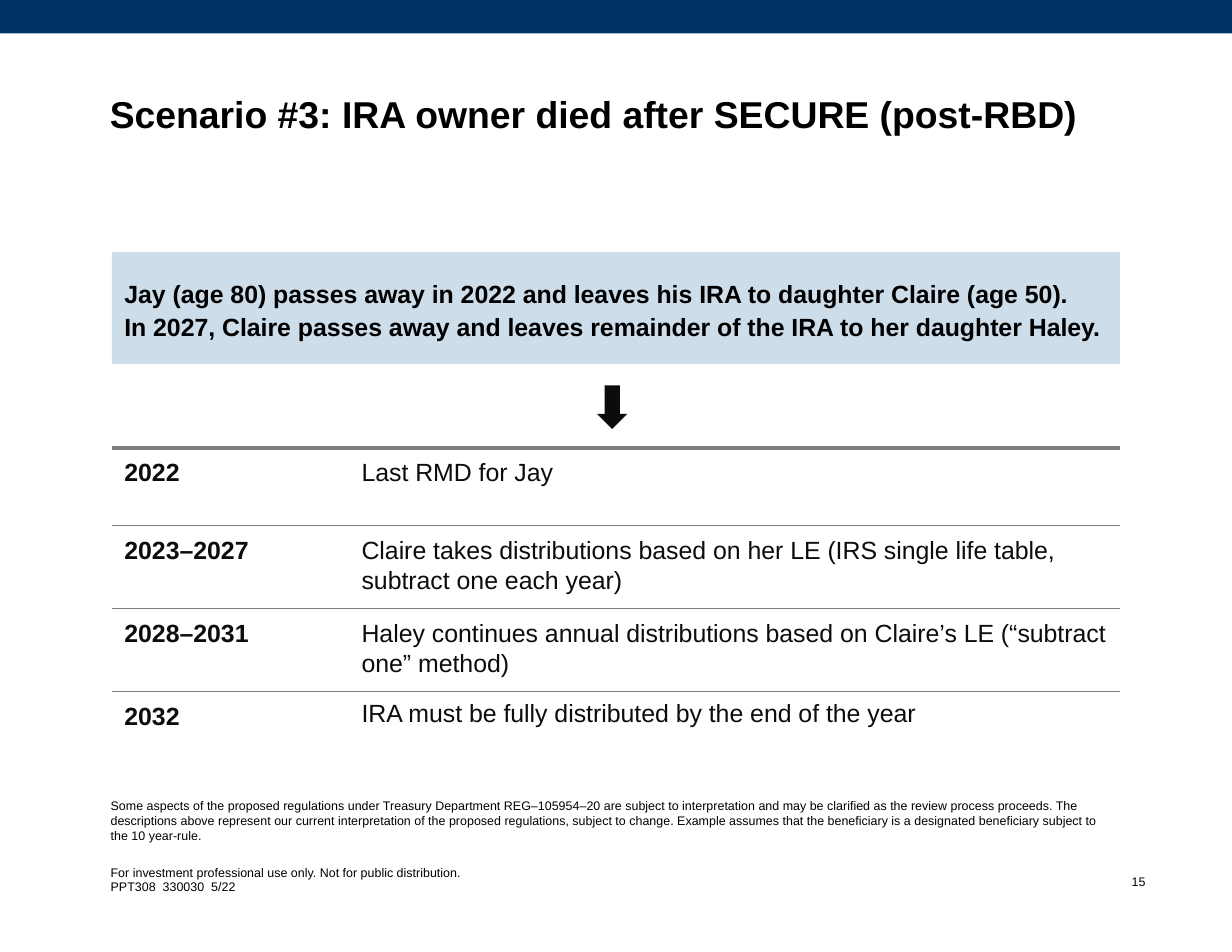
from dataclasses import dataclass

from lxml import etree
from pptx import Presentation
from pptx.dml.color import RGBColor
from pptx.enum.shapes import MSO_SHAPE
from pptx.enum.text import MSO_ANCHOR, PP_ALIGN
from pptx.oxml.ns import qn
from pptx.util import Cm, Pt

RECTANGLE = MSO_SHAPE.RECTANGLE
DOWN_ARROW = MSO_SHAPE.DOWN_ARROW
TOP, MIDDLE, BOTTOM = MSO_ANCHOR.TOP, MSO_ANCHOR.MIDDLE, MSO_ANCHOR.BOTTOM
LEFT, RIGHT = PP_ALIGN.LEFT, PP_ALIGN.RIGHT

FONT = "Arial"
NAVY, PALE_BLUE = "003365", "CDDDE9"
BLACK, INK, GREY = "000000", "0C0C0C", "808080"
SIDE_INSET, END_INSET, CELL_INSET = Cm(0.28), Cm(0.15), Cm(0.2)


@dataclass
class Box:
    left: float
    top: float
    width: float
    height: float

    def lengths(self) -> tuple:
        return Cm(self.left), Cm(self.top), Cm(self.width), Cm(self.height)


@dataclass
class Period:
    years: str
    rule: str
    spacing: float = 1.1


def colour(value: str) -> RGBColor:
    return RGBColor.from_string(value)


def style_paragraph(paragraph, size, ink=BLACK, bold=False, spacing=1.0, align=LEFT) -> None:
    paragraph.alignment = align
    paragraph.line_spacing = spacing
    font = paragraph.font
    font.name, font.size, font.bold = FONT, Pt(size), bold
    font.color.rgb = colour(ink)


def write(shape, text: str, size: float, anchor=TOP, wrap=True, side=SIDE_INSET, **style) -> None:
    frame = shape.text_frame
    frame.word_wrap = wrap
    frame.vertical_anchor = anchor
    frame.margin_left = frame.margin_right = side
    frame.margin_top = frame.margin_bottom = END_INSET
    frame.text = text
    for paragraph in frame.paragraphs:
        style_paragraph(paragraph, size, **style)


def add_text(slide, box: Box, text: str, size: float, **style) -> None:
    write(slide.shapes.add_textbox(*box.lengths()), text, size, **style)


def add_solid(slide, kind, box: Box, fill: str):
    shape = slide.shapes.add_shape(kind, *box.lengths())
    shape.shadow.inherit = False
    shape.fill.solid()
    shape.fill.fore_color.rgb = colour(fill)
    shape.line.fill.background()
    return shape


def set_border(cell, side: str, width: float) -> None:
    """Rule one side of a cell; a width of 0 leaves it blank."""
    border = etree.SubElement(cell._tc.get_or_add_tcPr(), qn(f"a:{side}"), w=str(Pt(width)))
    if width:
        solid = etree.SubElement(border, qn("a:solidFill"))
        etree.SubElement(solid, qn("a:srgbClr"), val=GREY)
    else:
        etree.SubElement(border, qn("a:noFill"))


def fill_cell(cell, text: str, bold: bool, spacing: float, above: float, below: float) -> None:
    for side, width in (("lnL", 0), ("lnR", 0), ("lnT", above), ("lnB", below)):
        set_border(cell, side, width)
    cell.fill.background()
    cell.margin_left = cell.margin_right = SIDE_INSET
    cell.margin_top = cell.margin_bottom = CELL_INSET
    cell.text = text
    style_paragraph(cell.text_frame.paragraphs[0], 16, INK, bold, spacing)


def add_timeline(slide, box: Box, widths: tuple, periods: list) -> None:
    table = slide.shapes.add_table(len(periods), len(widths), *box.lengths()).table
    table.first_row = table.horz_banding = False
    for column, width in zip(table.columns, widths):
        column.width = Cm(width)
    last = len(periods) - 1
    for row, period in enumerate(periods):
        above = 1 if row else 2.25
        below = 1 if row < last else 0
        fill_cell(table.cell(row, 0), period.years, True, 1.1, above, below)
        fill_cell(table.cell(row, 1), period.rule, False, period.spacing, above, below)


PERIODS = [
    Period("2022", "Last RMD for Jay"),
    Period("2023–2027", "Claire takes distributions based on her LE "
           "(IRS single life table, subtract one each year)"),
    Period("2028–2031", "Haley continues annual distributions based on Claire’s LE "
           "(“subtract one” method)"),
    Period("2032", "IRA must be fully distributed by the end of the year", spacing=1.0),
]


def main() -> None:
    deck = Presentation()
    deck.slide_width, deck.slide_height = Cm(27.94), Cm(21.59)
    slide = deck.slides.add_slide(deck.slide_layouts[6])

    # Top band and title
    add_solid(slide, RECTANGLE, Box(0, 0, 27.94, 0.76), NAVY)
    add_text(slide, Box(2.21, 2.03, 23.22, 0.89),
             "Scenario #3: IRA owner died after SECURE (post-RBD)", 24, bold=True, spacing=0.9)

    # Scenario and the arrow to its outcome
    scenario = add_solid(slide, RECTANGLE, Box(2.54, 5.72, 22.86, 2.54), PALE_BLUE)
    write(scenario,
          "Jay (age 80) passes away in 2022 and leaves his IRA to daughter Claire (age 50).\v"
          "In 2027, Claire passes away and leaves remainder of the IRA to her daughter Haley.",
          16, anchor=MIDDLE, bold=True, spacing=1.1)
    add_solid(slide, DOWN_ARROW, Box(13.54, 8.74, 0.69, 0.99), INK)

    # Distribution timeline
    add_timeline(slide, Box(2.54, 10.16, 22.86, 7.0), (5.38, 17.48), PERIODS)

    # Footnote, disclosure and page number
    add_text(slide, Box(2.23, 18.62, 23.24, 0.64),
             "Some aspects of the proposed regulations under Treasury Department REG–105954–20 "
             "are subject to interpretation and may be clarified as the review process proceeds. "
             "The descriptions above represent our current interpretation of the proposed "
             "regulations, subject to change. Example assumes that the beneficiary is a "
             "designated beneficiary subject to the 10 year-rule.", 8, anchor=BOTTOM)
    add_text(slide, Box(2.23, 19.46, 8.64, 0.97),
             "For investment professional use only. Not for public distribution.\n"
             "PPT308  330030  5/22", 8, wrap=False)
    add_text(slide, Box(25.4, 19.71, 0.71, 0.58), "15", 8, side=Cm(0.13),
             spacing=0.9, align=RIGHT)

    deck.save("out.pptx")


if __name__ == "__main__":
    main()
